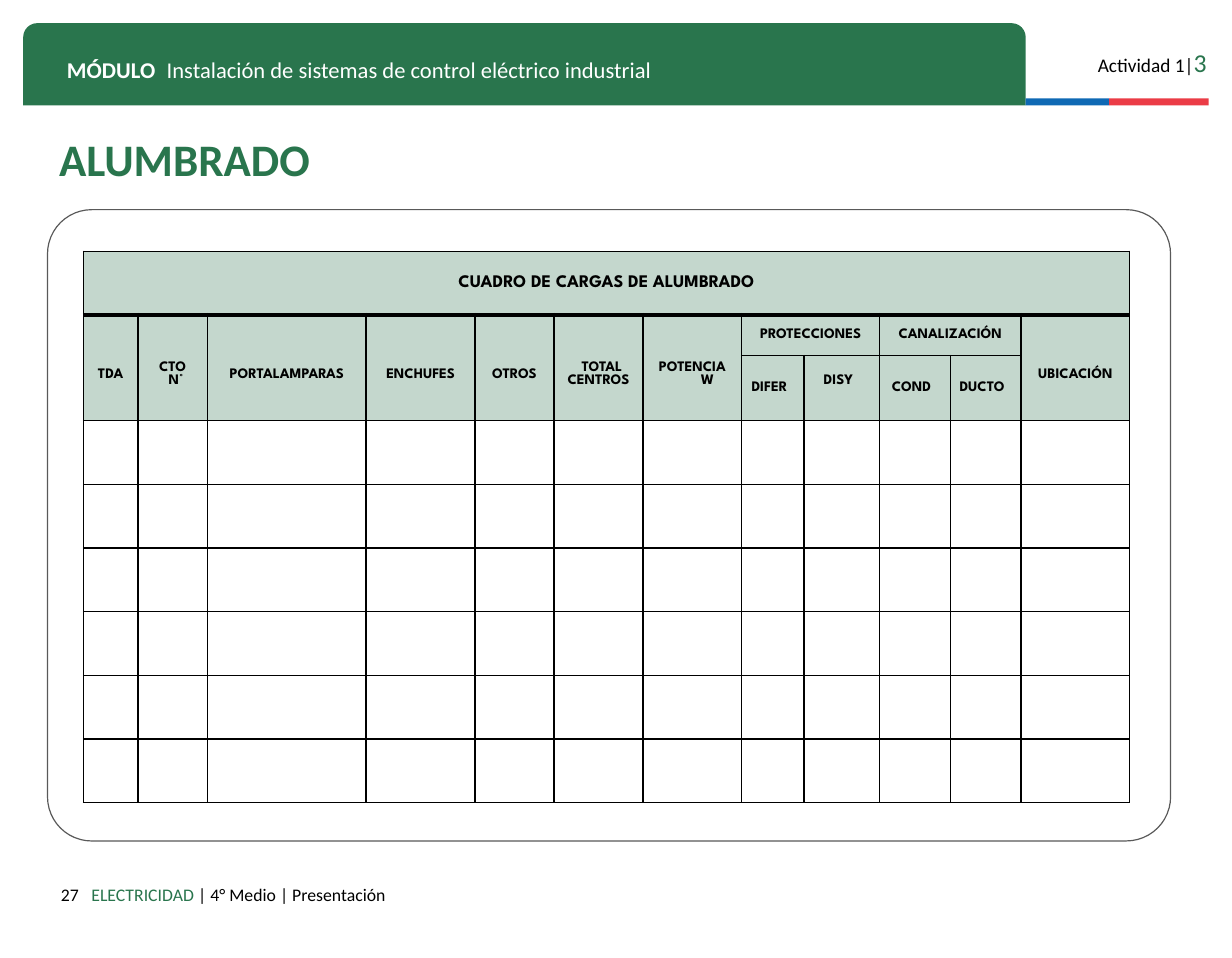
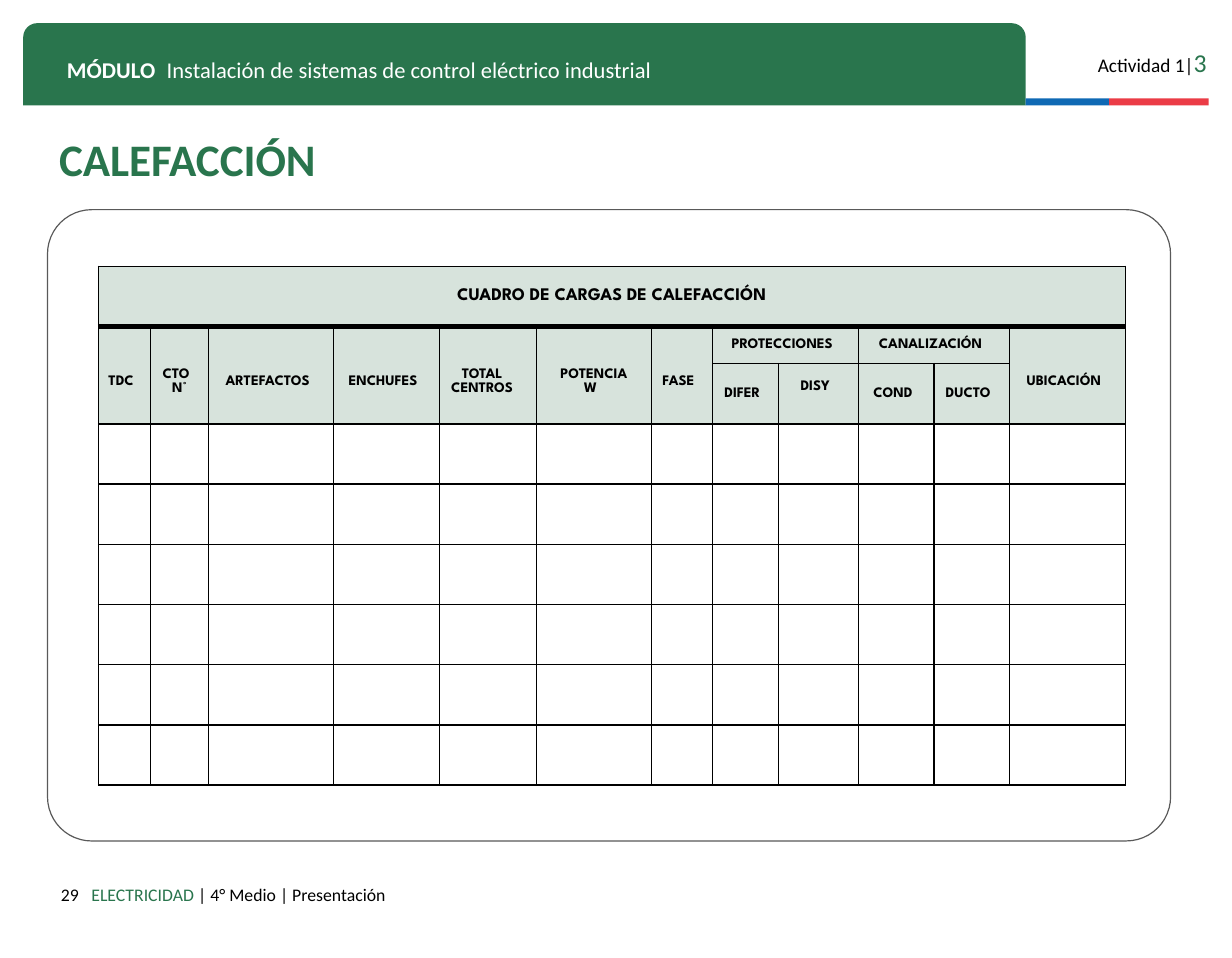
from dataclasses import dataclass
from itertools import groupby

from lxml.etree import SubElement
from pptx import Presentation
from pptx.dml.color import RGBColor
from pptx.enum.shapes import MSO_SHAPE as Shape
from pptx.enum.text import MSO_ANCHOR as Anchor, MSO_AUTO_SIZE as AutoSize, PP_ALIGN as Align
from pptx.oxml.ns import qn
from pptx.util import Pt

# Shared style
PX = 9144  # 100 px to the inch
GREEN, BLUE, RED = "29754D", "0F69B4", "EB3C46"
BLACK, WHITE, GREY = "000000", "FFFFFF", "595959"
BODY_FONT, TABLE_FONT = "Calibri", "League Spartan"
INSET = 10
HEADER_LINE = 12  # height of one line of header text
BLANK_ROWS = 6


@dataclass(frozen=True)
class Box:
    left: int
    top: int
    width: int
    height: int

    def emu(self) -> tuple[int, ...]:
        return tuple(n * PX for n in (self.left, self.top, self.width, self.height))


@dataclass(frozen=True)
class Piece:
    text: str
    size: int
    color: str
    bold: bool = False


@dataclass(frozen=True)
class Column:
    width: int
    heading: str
    indents: tuple[int, ...] = ()  # per line: positive from the left, negative from the right
    group: str = ""
    raised: bool = False


@dataclass(frozen=True)
class LoadSheet:
    page: int
    title: str
    caption: str
    left: int
    top: int
    tint: str
    inset: int
    row_heights: tuple[int, int, int]  # caption and blank rows, groups, headings
    columns: tuple[Column, ...]


def protection_columns(difer: int, disy: int, conduit: int, place: int) -> tuple[Column, ...]:
    return (
        Column(difer, "DIFER", group="PROTECCIONES"),
        Column(disy, "DISY", group="PROTECCIONES", raised=True),
        Column(conduit, "COND", group="CANALIZACIÓN"),
        Column(conduit, "DUCTO", group="CANALIZACIÓN"),
        Column(place, "UBICACIÓN"),
    )


SHEETS = (
    LoadSheet(27, "ALUMBRADO", "CUADRO DE CARGAS DE ALUMBRADO", 72, 217, "C4D7CD", 10, (55, 35, 56), (
        Column(47, "TDA"),
        Column(60, "CTO\nN°", (0, 6)),
        Column(137, "PORTALAMPARAS"),
        Column(94, "ENCHUFES"),
        Column(68, "OTROS"),
        Column(77, "TOTAL\nCENTROS", (6, 0)),
        Column(85, "POTENCIA\nW", (0, 26)),
        *protection_columns(54, 65, 61, 94),
    )),
    LoadSheet(29, "CALEFACCIÓN", "CUADRO DE CARGAS DE CALEFACCIÓN", 85, 230, "D7E3DC", 4, (52, 32, 52), (
        Column(45, "TDC"),
        Column(50, "CTO\nN°", (0, 6)),
        Column(108, "ARTEFACTOS"),
        Column(91, "ENCHUFES"),
        Column(84, "TOTAL\nCENTROS", (-4, 0)),
        Column(99, "POTENCIA\nW", (6, 0)),
        Column(53, "FASE"),
        *protection_columns(57, 69, 65, 100),
    )),
)


def rgb(code: str) -> RGBColor:
    return RGBColor.from_string(code)


def style_font(font, name: str, size: int, color: str, bold: bool = False) -> None:
    font.name, font.size, font.bold = name, Pt(size), bold
    font.color.rgb = rgb(color)


def add_block(slide, kind, box: Box, fill: str = "", line: str = ""):
    block = slide.shapes.add_shape(kind, *box.emu())
    block.shadow.inherit = False
    if fill:
        block.fill.solid()
        block.fill.fore_color.rgb = rgb(fill)
    else:
        block.fill.background()
    if line:
        block.line.color.rgb = rgb(line)
        block.line.width = Pt(0.75)
    else:
        block.line.fill.background()
    return block


def set_insets(frame) -> None:
    frame.margin_left = frame.margin_top = frame.margin_right = frame.margin_bottom = INSET * PX
    frame.word_wrap = True
    frame.auto_size = AutoSize.NONE


def add_label(slide, box: Box, *pieces: Piece, align=Align.LEFT, indent: int = 0, tab: int = 0) -> None:
    frame = slide.shapes.add_textbox(*box.emu()).text_frame
    set_insets(frame)
    paragraph = frame.paragraphs[0]
    paragraph.alignment = align
    for piece in pieces:
        run = paragraph.add_run()
        run.text = piece.text
        style_font(run.font, BODY_FONT, piece.size, piece.color, piece.bold)
    properties = paragraph._p.get_or_add_pPr()
    if indent:
        properties.set("marL", str(indent * PX))
    if tab:
        stops = SubElement(properties, qn("a:tabLst"))
        SubElement(stops, qn("a:tab"), pos=str(tab * PX), algn="l")


# Band and footer shared through the layout
def draw_shared_parts(slide) -> None:
    band = add_block(slide, Shape.ROUND_2_SAME_RECTANGLE, Box(20, 20, 865, 71), GREEN)
    band.adjustments[0], band.adjustments[1] = 0.17, 0
    add_block(slide, Shape.RECTANGLE, Box(885, 85, 72, 6), BLUE)
    add_block(slide, Shape.RECTANGLE, Box(957, 85, 86, 6), RED)
    add_label(slide, Box(923, 30, 128, 38),
              Piece("Actividad 1|", 12, BLACK), Piece("3", 16, GREEN), align=Align.RIGHT)
    add_label(slide, Box(48, 38, 814, 35), Piece("MÓDULO", 14, WHITE, True),
              Piece("\tInstalación de sistemas de control eléctrico industrial", 14, WHITE), tab=86)
    add_label(slide, Box(41, 753, 742, 38), Piece("ELECTRICIDAD ", 11, GREEN),
              Piece("| 4° Medio | Presentación", 11, BLACK), indent=28)


def move_shared_parts(slide, layout) -> None:
    """Draw the shared parts on a fresh slide and hand them to its layout."""
    for holder in list(layout.placeholders):
        if holder.placeholder_format.idx != 0:
            holder.element.getparent().remove(holder.element)
    draw_shared_parts(slide)
    for part in list(slide.shapes):
        if not part.is_placeholder:
            layout.shapes.element.append(part.element)


def set_title(slide, text: str) -> None:
    title = slide.shapes.title
    title.left, title.top, title.width, title.height = Box(41, 120, 425, 42).emu()
    frame = title.text_frame
    frame.text = text
    set_insets(frame)
    frame.vertical_anchor = Anchor.MIDDLE
    paragraph = frame.paragraphs[0]
    paragraph.alignment, paragraph.line_spacing = Align.LEFT, 0.8
    style_font(paragraph.runs[0].font, BODY_FONT, 28, GREEN, True)


# Load table
def paint_cell(cell, fill: str, top: int = 1, bottom: int = 1) -> None:
    properties = cell._tc.get_or_add_tcPr()
    for side, points in (("L", 1), ("R", 1), ("T", top), ("B", bottom)):
        edge = SubElement(properties, qn(f"a:ln{side}"), w=str(Pt(points)))
        SubElement(SubElement(edge, qn("a:solidFill")), qn("a:srgbClr"), val=BLACK)
    cell.fill.solid()
    cell.fill.fore_color.rgb = rgb(fill)


def write_cell(cell, text: str, size: int = 9, inset: int = INSET, indents: tuple[int, ...] = (),
               drop: int = 0, lift: int = 0) -> None:
    cell.text_frame.text = text
    cell.vertical_anchor = Anchor.MIDDLE
    cell.margin_left, cell.margin_right = inset * PX, INSET * PX
    cell.margin_top, cell.margin_bottom = (5 + drop) * PX, (5 + lift) * PX
    paragraphs = cell.text_frame.paragraphs
    for paragraph in paragraphs:
        paragraph.alignment = Align.CENTER
        style_font(paragraph.runs[0].font, TABLE_FONT, size, BLACK, True)
    for paragraph, indent in zip(paragraphs, indents):
        if indent:
            side = "marL" if indent > 0 else "marR"
            paragraph._p.get_or_add_pPr().set(side, str(abs(indent) * PX))


def draw_load_table(slide, sheet: LoadSheet) -> None:
    columns = sheet.columns
    tall, group_height, heading_height = sheet.row_heights
    heights = [tall, group_height, heading_height] + [tall] * BLANK_ROWS
    box = Box(sheet.left, sheet.top, sum(c.width for c in columns), sum(heights))
    table = slide.shapes.add_table(len(heights), len(columns), *box.emu()).table
    table.first_row = table.horz_banding = False
    for table_column, column in zip(table.columns, columns):
        table_column.width = column.width * PX
    for row, height in enumerate(heights):
        table.rows[row].height = height * PX
        for cell in table.rows[row].cells:
            paint_cell(cell, sheet.tint if row < 3 else WHITE,
                       top=3 if row == 1 else 1, bottom=3 if row == 0 else 1)

    # Caption
    table.cell(0, 0).merge(table.cell(0, len(columns) - 1))
    write_cell(table.cell(0, 0), sheet.caption, 11)

    # Headings: groups span their columns, the others span both rows
    for group, members in groupby(enumerate(columns), key=lambda item: item[1].group):
        members = list(members)
        if group:
            first, last = members[0][0], members[-1][0]
            table.cell(1, first).merge(table.cell(1, last))
            write_cell(table.cell(1, first), group, inset=sheet.inset)
        for index, column in members:
            if group:
                write_cell(table.cell(2, index), column.heading, inset=4,
                           lift=HEADER_LINE if column.raised else 0)
            else:
                table.cell(1, index).merge(table.cell(2, index))
                write_cell(table.cell(1, index), column.heading, inset=sheet.inset,
                           indents=column.indents, drop=HEADER_LINE)


def draw_sheet(slide, sheet: LoadSheet) -> None:
    set_title(slide, sheet.title)
    add_label(slide, Box(20, 753, 58, 29), Piece(str(sheet.page), 11, BLACK), align=Align.RIGHT)
    panel = add_block(slide, Shape.ROUNDED_RECTANGLE, Box(41, 181, 969, 545), line=GREY)
    panel.adjustments[0] = 0.07
    draw_load_table(slide, sheet)


def main() -> None:
    deck = Presentation()
    deck.slide_width, deck.slide_height = 1063 * PX, 827 * PX
    layout = deck.slide_layouts[5]
    slides = [deck.slides.add_slide(layout) for _ in SHEETS]
    move_shared_parts(slides[0], layout)
    for slide, sheet in zip(slides, SHEETS):
        draw_sheet(slide, sheet)
    deck.save("out.pptx")


if __name__ == "__main__":
    main()
